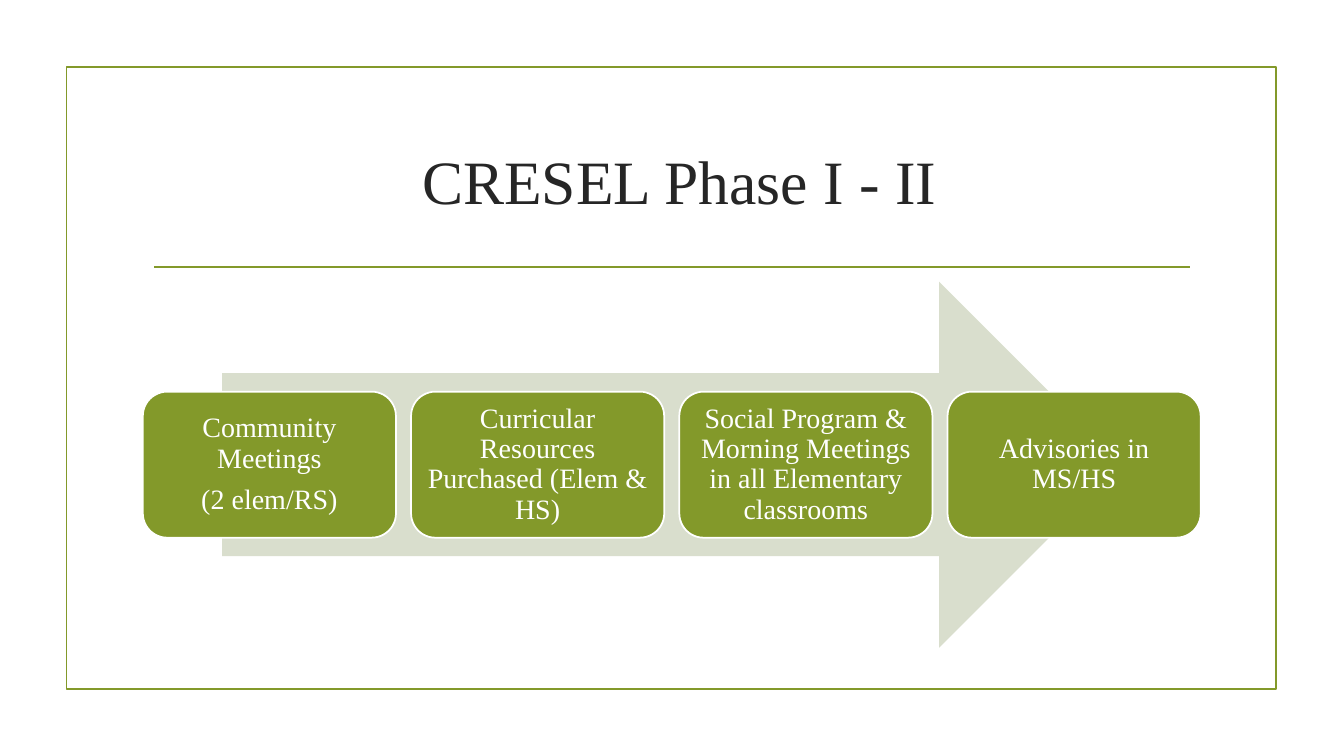
from pptx import Presentation
from pptx import util as u
from pptx.dml.color import RGBColor
from pptx.enum import shapes, text
from pptx.oxml.ns import qn
from lxml import etree

GREEN, PALE, WHITE, DARK = "83992A", "D9DECD", "FFFFFF", "262626"


def paint(part, color):
    part.solid()
    part.fore_color.rgb = RGBColor.from_string(color)


def write(shape, words, size, color, inset=0.2, lines=1.0, gap=0):
    frame = shape.text_frame
    frame.word_wrap = True
    frame.vertical_anchor = text.MSO_ANCHOR.MIDDLE
    frame.margin_left = frame.margin_right = u.Cm(inset)
    frame.margin_top = frame.margin_bottom = u.Cm(inset)
    frame.text = words
    for i, para in enumerate(frame.paragraphs):
        para.alignment = text.PP_ALIGN.CENTER
        para.line_spacing = lines
        para.space_before = u.Pt(gap if i else 0)
        para.font.name = "Times New Roman"
        para.font.size = u.Pt(size)
        paint(para.font.fill, color)


deck = Presentation()
deck.slide_width, deck.slide_height = u.Cm(33.87), u.Cm(19.05)
slide = deck.slides.add_slide(deck.slide_layouts[6])
parts = slide.shapes
kind = shapes.MSO_SHAPE

# Frame
frame = parts.add_shape(kind.RECTANGLE, u.Cm(1.68), u.Cm(1.69), u.Cm(30.48), u.Cm(15.67))
frame.shadow.inherit = False
frame.fill.background()
paint(frame.line.fill, GREEN)
frame.line.width = u.Pt(1.25)

# Rule under the title
rule = parts.add_connector(shapes.MSO_CONNECTOR.STRAIGHT, u.Cm(3.89), u.Cm(6.73), u.Cm(30), u.Cm(6.73))
paint(rule.line.fill, GREEN)
rule.line.width = u.Pt(1.25)
etree.SubElement(rule.element.spPr, qn("a:effectLst"))

# Title
title = parts.add_textbox(u.Cm(3.6), u.Cm(2.72), u.Cm(26.67), u.Cm(3.63))
write(title, " CRESEL Phase I - II", 44, DARK)

# Arrow behind the steps
arrow = parts.add_shape(kind.RIGHT_ARROW, u.Cm(5.6), u.Cm(7.1), u.Cm(22.68), u.Cm(9.22))
arrow.shadow.inherit = False
paint(arrow.fill, PALE)
arrow.line.fill.background()

# Steps
steps = [
    "Community Meetings\n(2 elem/RS)",
    "Curricular Resources Purchased (Elem & HS)",
    "Social Program & Morning Meetings in all Elementary classrooms",
    "Advisories in MS/HS",
]
left, pitch = 3.6, 6.76
for i, step in enumerate(steps):
    box = parts.add_shape(kind.ROUNDED_RECTANGLE, u.Cm(left + i * pitch), u.Cm(9.87), u.Cm(6.38), u.Cm(3.68))
    box.shadow.inherit = False
    paint(box.fill, GREEN)
    paint(box.line.fill, WHITE)
    box.line.width = u.Pt(1.25)
    write(box, step, 20, WHITE, lines=0.9, gap=8)

deck.save("out.pptx")
